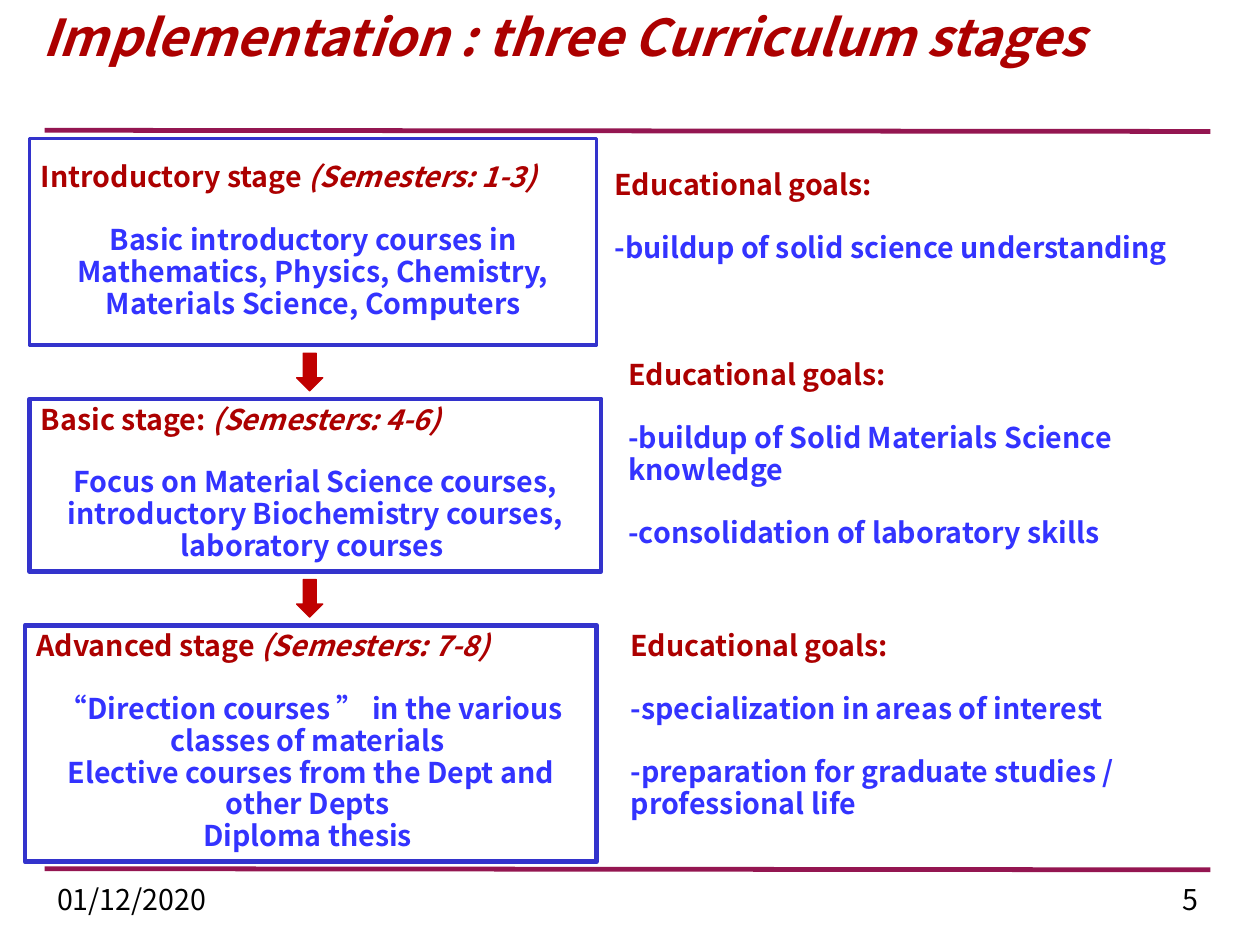
from lxml.etree import SubElement
from pptx import Presentation
from pptx.dml.color import RGBColor
from pptx.enum.shapes import MSO_CONNECTOR, MSO_SHAPE
from pptx.enum.text import MSO_ANCHOR, PP_ALIGN
from pptx.oxml.ns import qn
from pptx.util import Cm, Inches, Pt

WIDTH, HEIGHT = Cm(28), Cm(21)
FONT = "Noto Sans CJK TC"
BLACK = RGBColor(0x00, 0x00, 0x00)
WHITE = RGBColor(0xFF, 0xFF, 0xFF)
DARK_RED = RGBColor(0xAC, 0x00, 0x00)
ARROW_RED = RGBColor(0xC0, 0x00, 0x00)
PLUM = RGBColor(0x94, 0x16, 0x51)
FRAME_BLUE = RGBColor(0x33, 0x33, 0xCC)
TEXT_BLUE = RGBColor(0x33, 0x33, 0xFF)

TITLE = "Implementation : three Curriculum stages"
DATE, PAGE = "01/12/2020", "5"
GOALS_HEADING = "Educational goals:"

# Frames and goal areas are (left, top, width, height) in inches.
STAGES = [
    dict(name="Introductory stage ", semesters="(Semesters: 1-3)",
         courses=["Basic introductory courses in Mathematics, Physics, "
                  "Chemistry, Materials Science, Computers"],
         goals=["-buildup of solid science understanding"],
         frame=(0.26, 1.21, 4.96, 1.81), border=2.25, anchor=MSO_ANCHOR.MIDDLE,
         goals_area=(5.28, 1.44, 5.19, 0.95)),
    dict(name="Basic stage: ", semesters="(Semesters: 4-6)",
         courses=["Focus on Material Science courses, introductory "
                  "Biochemistry courses, laboratory courses "],
         goals=["-buildup of Solid Materials Science knowledge",
                "-consolidation of laboratory skills"],
         frame=(0.26, 3.49, 5, 1.51), border=3, anchor=MSO_ANCHOR.TOP,
         goals_area=(5.4, 3.1, 4.64, 1.79)),
    dict(name="Advanced stage ", semesters="(Semesters: 7-8)",
         courses=["“Direction courses ” in the various classes of materials ",
                  "Elective courses from the Dept and other Depts ",
                  "Diploma thesis "],
         goals=["-specialization in areas of interest",
                "-preparation for graduate studies / professional life"],
         frame=(0.22, 5.47, 5, 2.07), border=3, anchor=MSO_ANCHOR.TOP,
         goals_area=(5.42, 5.47, 4.53, 1.79)),
]

TITLE_AREA, TITLE_BOTTOM_MARGIN = (0.26, 0.2, 9.37, 0.83), 0.6
RULE_LEFT, RULE_RIGHT, RULE_DROP = 0.39, 10.59, 0.01
RULE_TOPS = (1.14, 7.6)
FOOTER_TOP, FOOTER_HEIGHT = 7.68, 0.39
ARROW_CENTER, ARROW_WIDTH, ARROW_HEIGHT = 2.71, 0.23, 0.33
LINE_SPACING, BLANK_LINE = 0.93, Pt(19.5)


def inches(*lengths):
    return [Inches(length) for length in lengths]


def set_up_frame(frame, margins, anchor=MSO_ANCHOR.TOP):
    frame.word_wrap = True
    frame.vertical_anchor = anchor
    frame.margin_left = frame.margin_right = Inches(margins[0])
    frame.margin_top = frame.margin_bottom = Inches(margins[1])


def style(run, color, size=18, bold=True, italic=False):
    font = run.font
    font.name, font.size = FONT, Pt(size)
    font.bold, font.italic = bold, italic
    font.color.rgb = color
    SubElement(run._r.get_or_add_rPr(), qn("a:ea"), typeface=FONT)


def add_label(slide, area, text, color, align=PP_ALIGN.LEFT,
              anchor=MSO_ANCHOR.TOP, **look):
    frame = slide.shapes.add_textbox(*inches(*area)).text_frame
    set_up_frame(frame, (0.11, 0.06), anchor)
    frame.text = text
    paragraph = frame.paragraphs[0]
    paragraph.alignment, paragraph.line_spacing = align, LINE_SPACING
    style(paragraph.runs[0], color, **look)
    return frame


def write_section(frame, heading, lines, align, gaps):
    """Red heading, italic after its first part, over blue lines; gaps holds
    the space before each line."""
    first = frame.paragraphs[0]
    first.alignment, first.line_spacing = PP_ALIGN.LEFT, LINE_SPACING
    for index, part in enumerate(heading):
        run = first.add_run()
        run.text = part
        style(run, DARK_RED, italic=index > 0)
    for line, gap in zip(lines, gaps):
        paragraph = frame.add_paragraph()
        paragraph.text = line
        paragraph.alignment, paragraph.line_spacing = align, LINE_SPACING
        paragraph.space_before = gap
        style(paragraph.runs[0], TEXT_BLUE)


def add_rule(slide, top):
    rule = slide.shapes.add_connector(
        MSO_CONNECTOR.STRAIGHT,
        *inches(RULE_LEFT, top, RULE_RIGHT, top + RULE_DROP))
    rule.line.color.rgb, rule.line.width = PLUM, Pt(3)
    SubElement(rule._element.spPr, qn("a:effectLst"))


def add_block(slide, preset, area, fill, line, line_width):
    block = slide.shapes.add_shape(preset, *inches(*area))
    block.shadow.inherit = False
    block.fill.solid()
    block.fill.fore_color.rgb = fill
    block.line.color.rgb, block.line.width = line, Pt(line_width)
    return block


def add_stage(slide, stage):
    box = add_block(slide, MSO_SHAPE.RECTANGLE, stage["frame"],
                    WHITE, FRAME_BLUE, stage["border"])
    set_up_frame(box.text_frame, (0.1, 0.05), stage["anchor"])
    courses, goals = stage["courses"], stage["goals"]
    write_section(box.text_frame, (stage["name"], stage["semesters"]), courses,
                  PP_ALIGN.CENTER, [BLANK_LINE] + [Pt(0)] * (len(courses) - 1))

    goals_box = slide.shapes.add_textbox(*inches(*stage["goals_area"]))
    set_up_frame(goals_box.text_frame, (0.1, 0.05))
    write_section(goals_box.text_frame, (GOALS_HEADING,), goals,
                  PP_ALIGN.LEFT, [BLANK_LINE] * len(goals))


def add_arrow_between(slide, upper, lower):
    middle = (upper[1] + upper[3] + lower[1]) / 2
    area = (ARROW_CENTER - ARROW_WIDTH / 2, middle - ARROW_HEIGHT / 2,
            ARROW_WIDTH, ARROW_HEIGHT)
    add_block(slide, MSO_SHAPE.DOWN_ARROW, area, ARROW_RED, ARROW_RED, 0.75)


def main():
    deck = Presentation()
    deck.slide_width, deck.slide_height = WIDTH, HEIGHT
    slide = deck.slides.add_slide(deck.slide_layouts[6])

    for top in RULE_TOPS:
        add_rule(slide, top)
    add_label(slide, (RULE_LEFT, FOOTER_TOP, 2.3, FOOTER_HEIGHT),
              DATE, BLACK, bold=False)
    add_label(slide, (RULE_RIGHT - 1.93, FOOTER_TOP, 1.93, FOOTER_HEIGHT),
              PAGE, BLACK, PP_ALIGN.RIGHT, bold=False)
    title = add_label(slide, TITLE_AREA, TITLE, DARK_RED,
                      anchor=MSO_ANCHOR.MIDDLE, size=32, italic=True)
    title.margin_bottom = Inches(TITLE_BOTTOM_MARGIN)
    for stage in STAGES:
        add_stage(slide, stage)
    for upper, lower in zip(STAGES, STAGES[1:]):
        add_arrow_between(slide, upper["frame"], lower["frame"])
    deck.save("out.pptx")


if __name__ == "__main__":
    main()
